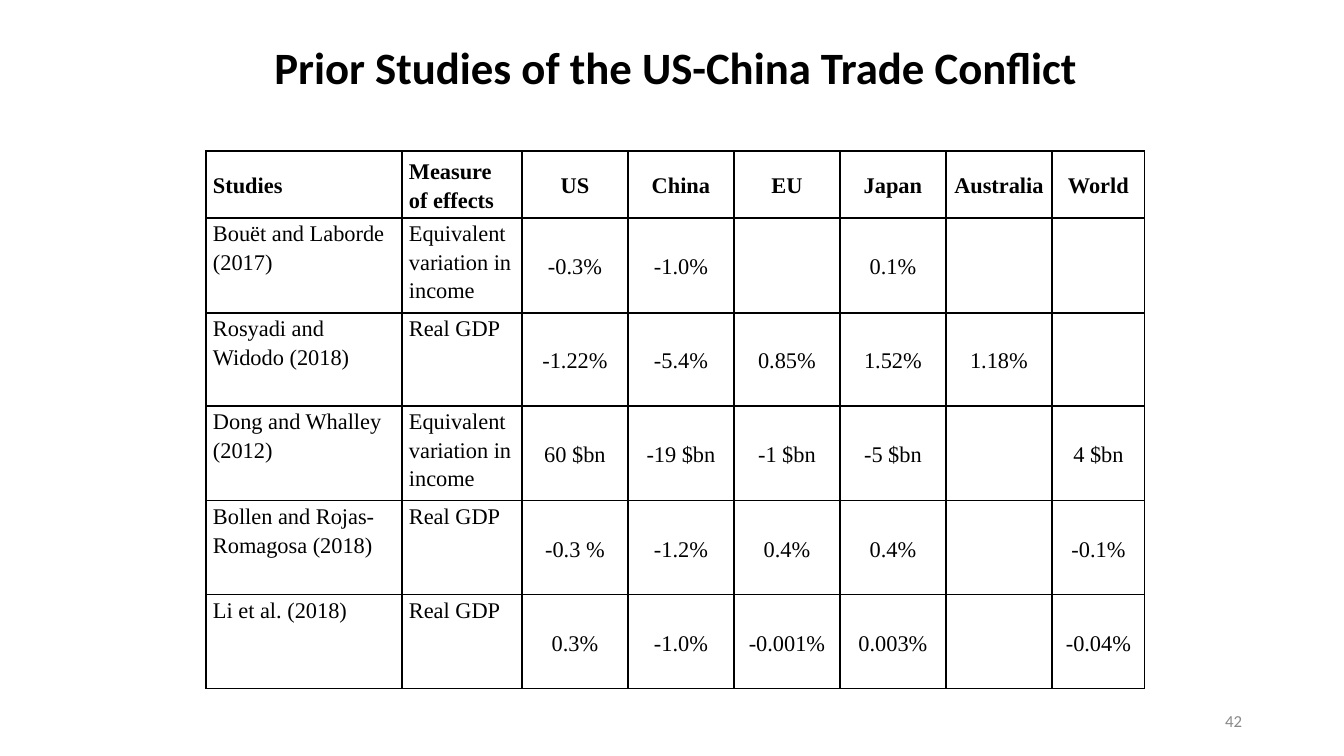
from lxml.etree import SubElement
from pptx import Presentation
from pptx.dml.color import RGBColor
from pptx.enum.text import MSO_ANCHOR as Anchor, PP_ALIGN as Align
from pptx.oxml.ns import qn
from pptx.util import Pt

PX = 914400 / 100.8
BLACK = RGBColor(0, 0, 0)
GREY = RGBColor(0x89, 0x89, 0x89)

COLS = [196, 120] + [106] * 5 + [93]
ROWS = [67, 95, 93, 95, 94, 94]
INCOME = "Equivalent variation in income"
STUDIES = [
    ["Studies", "Measure of effects", "US", "China", "EU", "Japan", "Australia", "World"],
    ["Bouët and Laborde (2017)", INCOME, "-0.3%", "-1.0%", "", "0.1%", "", ""],
    ["Rosyadi and Widodo (2018)", "Real GDP", "-1.22%", "-5.4%", "0.85%", "1.52%", "1.18%", ""],
    ["Dong and Whalley (2012)", INCOME, "60 $bn", "-19 $bn", "-1 $bn", "-5 $bn", "", "4 $bn"],
    ["Bollen and Rojas-Romagosa (2018)", "Real GDP", "-0.3 %", "-1.2%", "0.4%", "0.4%", "", "-0.1%"],
    ["Li et al. (2018)", "Real GDP", "0.3%", "-1.0%", "-0.001%", "0.003%", "", "-0.04%"],
]


def px(n):
    return round(n * PX)


def write(para, text, size, font, color=BLACK, bold=False):
    run = para.add_run()
    run.text = text
    run.font.size = Pt(size)
    run.font.name = font
    run.font.bold = bold
    run.font.color.rgb = color


def add_text(slide, box, text, size, align, anchor, color=BLACK, bold=False):
    frame = slide.shapes.add_textbox(*map(px, box)).text_frame
    frame.word_wrap = True
    frame.vertical_anchor = anchor
    para = frame.paragraphs[0]
    para.alignment = align
    write(para, text, size, "Calibri", color, bold)
    return para


def add_title(slide, box):
    para = add_text(slide, box, "Prior Studies of the US-China Trade Conflict",
                    32, Align.CENTER, Anchor.TOP, bold=True)
    para.line_spacing = 0.8
    para.space_before = Pt(10)


def add_border(cell):
    props = cell._tc.get_or_add_tcPr()
    for i, side in enumerate(("a:lnL", "a:lnR", "a:lnT", "a:lnB")):
        line = props.makeelement(qn(side), {"w": str(Pt(1))})
        fill = SubElement(line, qn("a:solidFill"))
        SubElement(fill, qn("a:srgbClr"), val=str(BLACK))
        props.insert(i, line)


def fill_cell(cell, text, head, label):
    cell.fill.background()
    add_border(cell)
    cell.margin_left = cell.margin_right = px(7)
    cell.margin_top = cell.margin_bottom = 0
    # Study names and measures sit at the top left, values in the middle
    cell.vertical_anchor = Anchor.TOP if label and not head else Anchor.MIDDLE
    para = cell.text_frame.paragraphs[0]
    para.alignment = Align.LEFT if label else Align.CENTER
    para.line_spacing = 1.15
    if text:
        write(para, text, 16, "Times New Roman", bold=head)


def add_studies(slide, left, top):
    box = (left, top, sum(COLS), sum(ROWS))
    table = slide.shapes.add_table(len(ROWS), len(COLS), *map(px, box)).table
    table.first_row = table.horz_banding = False
    for col, width in zip(table.columns, COLS):
        col.width = px(width)
    for r, (height, texts) in enumerate(zip(ROWS, STUDIES)):
        table.rows[r].height = px(height)
        for c, text in enumerate(texts):
            fill_cell(table.cell(r, c), text, head=r == 0, label=c < 2)


def main():
    prs = Presentation()
    prs.slide_width, prs.slide_height = px(1344), px(756)
    slide = prs.slides.add_slide(prs.slide_layouts[6])
    # Title
    add_title(slide, (243, 45, 866, 68))
    # Page number
    add_text(slide, (950, 701, 302, 40), "42", 12, Align.RIGHT, Anchor.MIDDLE, GREY)
    # Table of studies
    add_studies(slide, 206, 151)
    prs.save("out.pptx")


if __name__ == "__main__":
    main()
